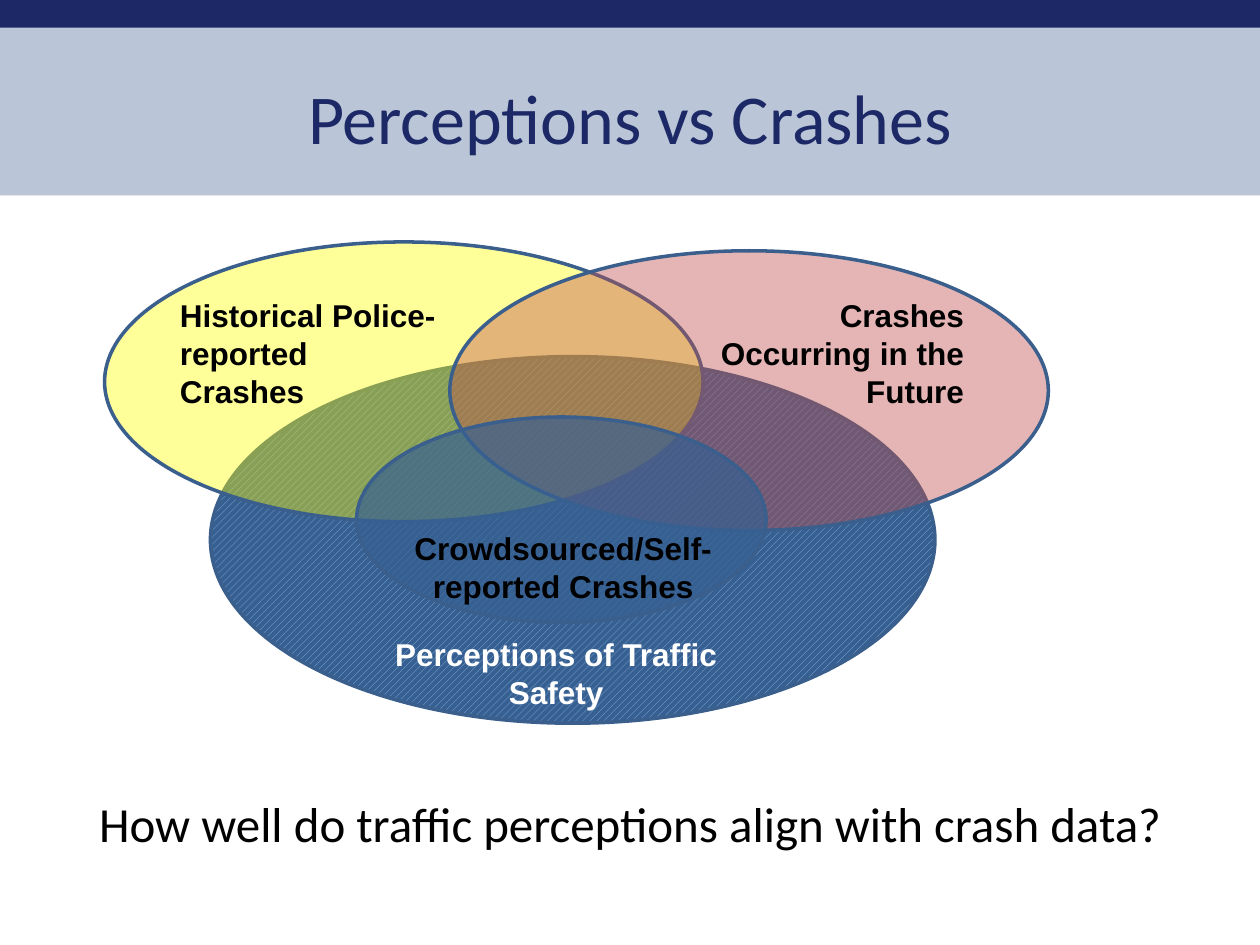
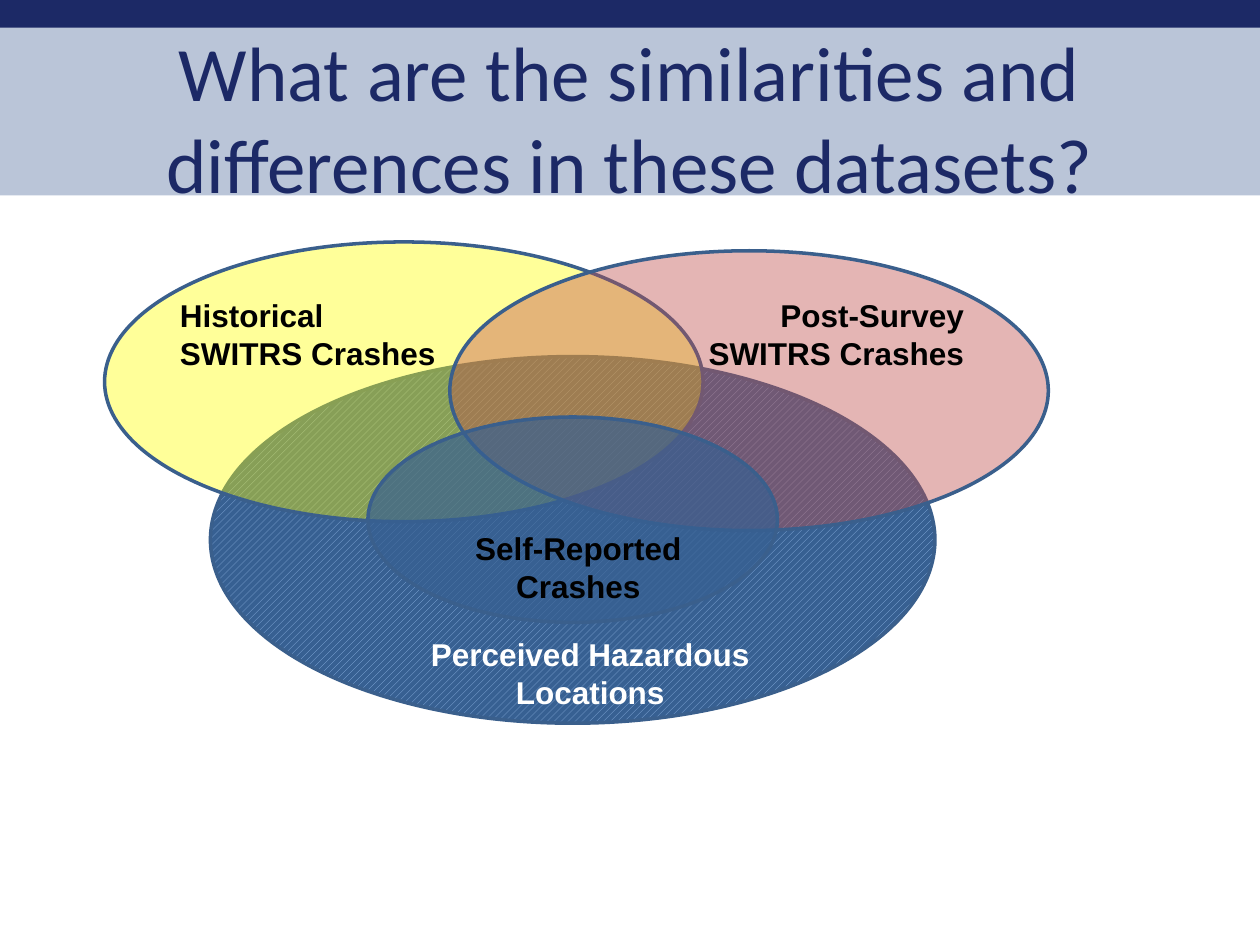
"""Builds two slides that compare traffic perceptions with crash records in a Venn diagram."""
from dataclasses import dataclass

from lxml import etree
from pptx import Presentation
from pptx.dml.color import RGBColor
from pptx.enum.dml import MSO_PATTERN
from pptx.enum.shapes import MSO_SHAPE
from pptx.enum.text import MSO_ANCHOR, MSO_AUTO_SIZE, PP_ALIGN
from pptx.oxml.ns import qn
from pptx.util import Inches, Pt

LEFT, CENTER, RIGHT = PP_ALIGN.LEFT, PP_ALIGN.CENTER, PP_ALIGN.RIGHT
MIDDLE = MSO_ANCHOR.MIDDLE
NO_AUTO_SIZE = MSO_AUTO_SIZE.NONE
OVAL, RECTANGLE = MSO_SHAPE.OVAL, MSO_SHAPE.RECTANGLE
WIDE_STRIPES = MSO_PATTERN.WIDE_UPWARD_DIAGONAL


@dataclass(frozen=True)
class Theme:
    """Colours, fonts and type sizes of both slides."""
    navy: str = "1C2966"
    band: str = "BAC5D8"
    outline: str = "3A5F8C"
    blue: str = "376092"
    stripe: str = "8EB4E3"
    yellow: str = "FFFF00"
    red: str = "C0504D"
    black: str = "000000"
    white: str = "FFFFFF"
    heading_font: str = "Calibri"
    label_font: str = "Arial"
    label_size: int = 18
    caption_size: int = 28
    outline_width: int = 2


THEME = Theme()
SLIDE_WIDTH, SLIDE_HEIGHT = 10, 7.5
MARGIN = 0.5
CONTENT_WIDTH = SLIDE_WIDTH - 2 * MARGIN
TITLE_BOX = (MARGIN, 0.3, CONTENT_WIDTH, 1.25)
CAPTION_BOX = (MARGIN, 6.25, CONTENT_WIDTH, 0.83)
BANDS = [(1.55, THEME.band), (0.22, THEME.navy)]

RECORD_SIZE = (4.75, 2.22)
PERCEPTION_BOX = (1.67, 2.83, 5.75, 2.91)
RECORD_OVALS = [
    ((0.83, 1.92, *RECORD_SIZE), THEME.yellow, 40),
    ((3.57, 1.99, *RECORD_SIZE), THEME.red, 42),
]
REPORT_TOP, REPORT_SIZE = 3.31, (3.25, 1.63)
REPORT_OPACITY = 70
LABEL_HEIGHT = 0.71
LABEL_TOPS = (2.3, 2.3, 4.15, 4.99)
LABEL_STYLES = [
    (LEFT, THEME.black),
    (RIGHT, THEME.black),
    (CENTER, THEME.black),
    (CENTER, THEME.white),
]

SLIDES = [
    {
        "title": "Perceptions vs Crashes",
        "title_size": 40,
        "report_left": 2.83,
        "labels": [
            ("Historical Police-reported Crashes", 1.33, 2.25),
            ("Crashes Occurring in the Future", 5.5, 2.25),
            ("Crowdsourced/Self-reported Crashes", 3.08, 2.78),
            ("Perceptions of Traffic Safety", 2.83, 3.17),
        ],
        "caption": "How well do traffic perceptions align with crash data?",
    },
    {
        "title": "What are the similarities and differences in these datasets?",
        "title_size": 44,
        "report_left": 2.92,
        "labels": [
            ("Historical SWITRS Crashes", 1.33, 2.25),
            ("Post-Survey SWITRS Crashes", 5.5, 2.25),
            ("Self-Reported Crashes", 3.38, 2.42),
            ("Perceived Hazardous Locations", 3.25, 2.87),
        ],
        "caption": None,
    },
]


def color(value):
    """Return a colour from its hexadecimal text."""
    return RGBColor.from_string(value)


def write(shape, text, font_name, size, text_color, alignment=CENTER, bold=False):
    """Put one formatted paragraph into a shape."""
    frame = shape.text_frame
    frame.text = text
    frame.word_wrap = True
    frame.auto_size = NO_AUTO_SIZE
    paragraph = frame.paragraphs[0]
    paragraph.alignment = alignment
    font = paragraph.runs[0].font
    font.name, font.size, font.bold = font_name, Pt(size), bold
    font.color.rgb = color(text_color)


def add_text(slide, box, *style, **options):
    """Add a text box with one formatted paragraph."""
    write(slide.shapes.add_textbox(*map(Inches, box)), *style, **options)


def add_filled(slide, kind, box, fill, opacity=100):
    """Add a preset shape with a plain, possibly transparent, fill."""
    shape = slide.shapes.add_shape(kind, *map(Inches, box))
    shape.shadow.inherit = False
    shape.line.fill.background()
    shape.fill.solid()
    shape.fill.fore_color.rgb = color(fill)
    if opacity < 100:
        fill_color = shape.fill._xPr.find(qn("a:solidFill"))[0]
        etree.SubElement(fill_color, qn("a:alpha")).set("val", str(opacity * 1000))
    return shape


def add_oval(slide, box, fill, opacity=100):
    """Add one outlined set of the Venn diagram."""
    oval = add_filled(slide, OVAL, box, fill, opacity)
    oval.line.color.rgb = color(THEME.outline)
    oval.line.width = Pt(THEME.outline_width)
    return oval


def add_bands(layout, slide):
    """Place the header bands on the layout, behind its placeholders."""
    for position, (height, fill) in enumerate(BANDS, start=2):
        band = add_filled(slide, RECTANGLE, (0, 0, SLIDE_WIDTH, height), fill)
        layout.shapes._spTree.insert(position, band._element)


def add_title(slide, text, size):
    """Move and format the title placeholder."""
    title = slide.shapes.title
    title.left, title.top, title.width, title.height = map(Inches, TITLE_BOX)
    write(title, text, THEME.heading_font, size, THEME.navy)
    title.text_frame.vertical_anchor = MIDDLE


def add_venn(slide, report_left, labels):
    """Draw the four overlapping sets and their labels."""
    perceptions = add_oval(slide, PERCEPTION_BOX, THEME.blue)
    perceptions.fill.patterned()
    perceptions.fill.pattern = WIDE_STRIPES
    perceptions.fill.fore_color.rgb = color(THEME.stripe)
    perceptions.fill.back_color.rgb = color(THEME.blue)
    for box, fill, opacity in RECORD_OVALS:
        add_oval(slide, box, fill, opacity)
    add_oval(slide, (report_left, REPORT_TOP, *REPORT_SIZE), THEME.blue, REPORT_OPACITY)
    for (text, left, width), top, (alignment, text_color) in zip(labels, LABEL_TOPS, LABEL_STYLES):
        add_text(slide, (left, top, width, LABEL_HEIGHT), text, THEME.label_font,
                 THEME.label_size, text_color, alignment, bold=True)


def main():
    """Build and save the presentation."""
    presentation = Presentation()
    presentation.slide_width = Inches(SLIDE_WIDTH)
    presentation.slide_height = Inches(SLIDE_HEIGHT)
    layout = presentation.slide_layouts.get_by_name("Title Only")
    for number, content in enumerate(SLIDES):
        slide = presentation.slides.add_slide(layout)
        if number == 0:
            add_bands(layout, slide)
        add_title(slide, content["title"], content["title_size"])
        add_venn(slide, content["report_left"], content["labels"])
        if content["caption"]:
            add_text(slide, CAPTION_BOX, content["caption"], THEME.heading_font,
                     THEME.caption_size, THEME.black)
    presentation.save("out.pptx")


if __name__ == "__main__":
    main()
